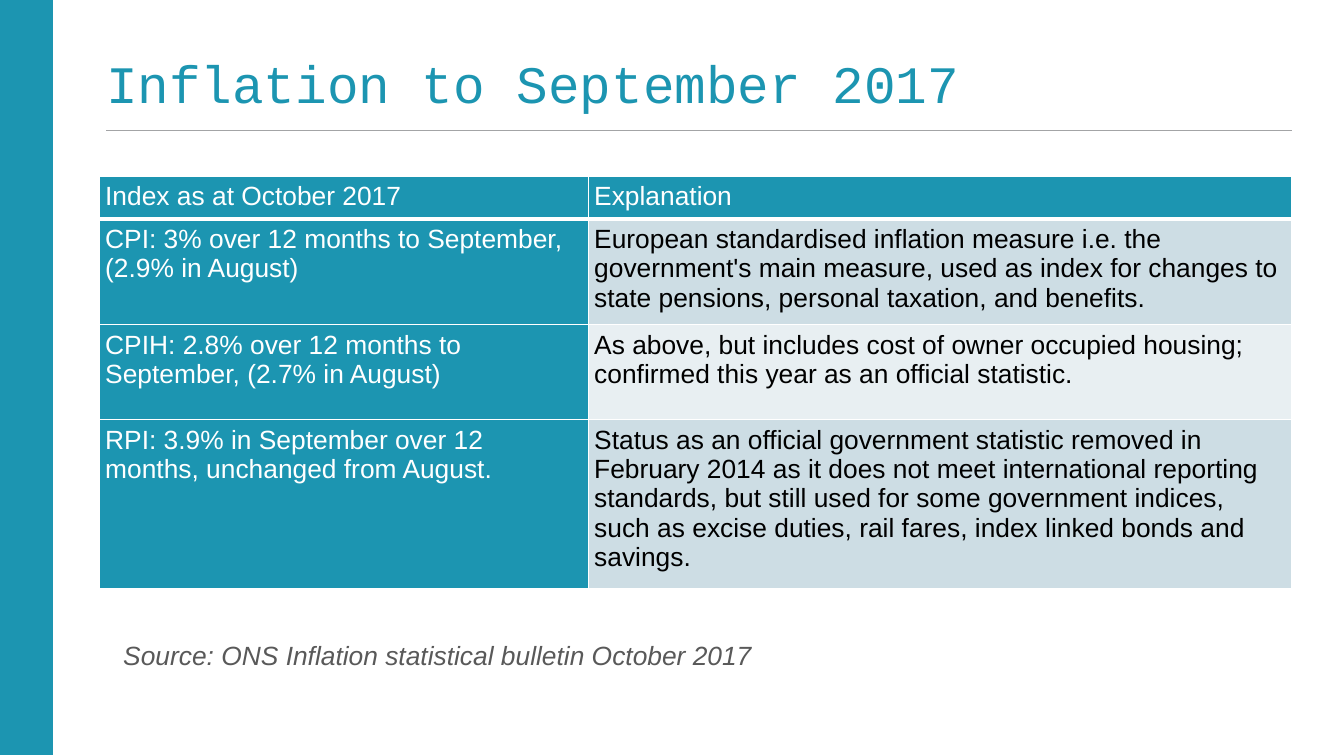
from dataclasses import dataclass

from lxml.etree import SubElement
from pptx import Presentation
from pptx.dml.color import RGBColor
from pptx.enum.shapes import MSO_CONNECTOR, MSO_SHAPE
from pptx.enum.text import MSO_ANCHOR
from pptx.oxml.ns import qn
from pptx.slide import Slide
from pptx.table import _Cell
from pptx.text.text import TextFrame
from pptx.util import Pt

TEAL = "1C95B1"
WHITE = "FFFFFF"
BLACK = "000000"
PALE_BLUE = "CDDDE4"
PALER_BLUE = "E8EFF2"
RULE_GREY = "A3A4A6"
SOURCE_GREY = "595959"

SLIDE_WIDTH, SLIDE_HEIGHT = 1020.96, 573.84
CONTENT_LEFT, CONTENT_RIGHT = 80.6, 981.4
RULE_TOP = 99.4
COLUMN_WIDTHS = (371.5, 534.2)
CELL_MARGIN = 4.2


@dataclass(frozen=True)
class IndexRow:
    index: str
    explanation: str
    height: float
    explanation_fill: str
    explanation_color: str = BLACK
    bottom_border: float = 1


INDEX_ROWS = (
    IndexRow("Index as at October 2017", "Explanation", 32, TEAL, WHITE, 3),
    IndexRow(
        "CPI: 3% over 12 months to September, (2.9% in August)",
        "European standardised inflation measure i.e. the government's main measure, "
        "used as index for changes to state pensions, personal taxation, and benefits.",
        80.2,
        PALE_BLUE,
    ),
    IndexRow(
        "CPIH: 2.8% over 12 months to September, (2.7% in August)",
        "As above, but includes cost of owner occupied housing; "
        "confirmed this year as an official statistic.",
        72.3,
        PALER_BLUE,
    ),
    IndexRow(
        "RPI: 3.9% in September over 12 months, unchanged from August.",
        "Status as an official government statistic removed in February 2014 as it does "
        "not meet international reporting standards, but still used for some government "
        "indices, such as excise duties, rail fares, index linked bonds and savings.",
        128,
        PALE_BLUE,
    ),
)


def rgb(color: str) -> RGBColor:
    return RGBColor.from_string(color)


def write_text(
    frame: TextFrame,
    text: str,
    *,
    color: str,
    size: float = 20,
    font_name: str = "Arial",
    italic: bool = False,
    line_spacing: float = 1.0,
) -> None:
    paragraph = frame.paragraphs[0]
    paragraph.line_spacing = line_spacing
    run = paragraph.add_run()
    run.text = text
    run.font.name = font_name
    run.font.size = Pt(size)
    run.font.bold = False
    run.font.italic = italic
    run.font.color.rgb = rgb(color)


def add_text_frame(
    slide: Slide, left: float, top: float, width: float, height: float
) -> TextFrame:
    frame = slide.shapes.add_textbox(Pt(left), Pt(top), Pt(width), Pt(height)).text_frame
    frame.word_wrap = True
    frame.vertical_anchor = MSO_ANCHOR.MIDDLE
    frame.margin_left = frame.margin_right = 0
    frame.margin_top = frame.margin_bottom = 0
    return frame


def add_side_band(slide: Slide) -> None:
    band = slide.shapes.add_shape(MSO_SHAPE.RECTANGLE, 0, 0, Pt(40.3), Pt(SLIDE_HEIGHT))
    band.shadow.inherit = False
    band.fill.solid()
    band.fill.fore_color.rgb = rgb(TEAL)
    band.line.fill.background()


def add_title_rule(slide: Slide) -> None:
    rule = slide.shapes.add_connector(
        MSO_CONNECTOR.STRAIGHT,
        Pt(CONTENT_LEFT),
        Pt(RULE_TOP),
        Pt(CONTENT_RIGHT),
        Pt(RULE_TOP),
    )
    rule.line.width = Pt(1)
    rule.line.color.rgb = rgb(RULE_GREY)
    SubElement(rule._element.spPr, qn("a:effectLst"))


def add_borders(cell: _Cell, top: float, bottom: float) -> None:
    properties = cell._tc.get_or_add_tcPr()
    for side, width in (("L", 1), ("R", 1), ("T", top), ("B", bottom)):
        border = SubElement(properties, qn(f"a:ln{side}"), w=str(Pt(width)))
        fill = SubElement(border, qn("a:solidFill"))
        SubElement(fill, qn("a:srgbClr"), val=WHITE)


def fill_cell(
    cell: _Cell, text: str, fill: str, color: str, top: float, bottom: float
) -> None:
    add_borders(cell, top, bottom)
    cell.fill.solid()
    cell.fill.fore_color.rgb = rgb(fill)
    cell.margin_left = cell.margin_right = Pt(CELL_MARGIN)
    cell.margin_top = cell.margin_bottom = Pt(CELL_MARGIN)
    cell.vertical_anchor = MSO_ANCHOR.TOP
    write_text(cell.text_frame, text, color=color)


def add_index_table(slide: Slide) -> None:
    width = sum(COLUMN_WIDTHS)
    height = sum(row.height for row in INDEX_ROWS)
    table = slide.shapes.add_table(
        len(INDEX_ROWS),
        len(COLUMN_WIDTHS),
        Pt(CONTENT_RIGHT - width),
        Pt(134),
        Pt(width),
        Pt(height),
    ).table
    for column, column_width in zip(table.columns, COLUMN_WIDTHS):
        column.width = Pt(column_width)
    top = 1
    for position, row in enumerate(INDEX_ROWS):
        table.rows[position].height = Pt(row.height)
        cells = (
            (row.index, TEAL, WHITE),
            (row.explanation, row.explanation_fill, row.explanation_color),
        )
        for column_position, (text, fill, color) in enumerate(cells):
            cell = table.cell(position, column_position)
            fill_cell(cell, text, fill, color, top, row.bottom_border)
        top = row.bottom_border


def main() -> None:
    presentation = Presentation()
    presentation.slide_width = Pt(SLIDE_WIDTH)
    presentation.slide_height = Pt(SLIDE_HEIGHT)
    slide = presentation.slides.add_slide(presentation.slide_layouts[6])

    add_side_band(slide)
    add_title_rule(slide)
    write_text(
        add_text_frame(slide, CONTENT_LEFT, 45.6, CONTENT_RIGHT - CONTENT_LEFT, 42.5),
        "Inflation to September 2017",
        color=TEAL,
        size=40,
        font_name="Courier New",
        line_spacing=0.8,
    )
    write_text(
        add_text_frame(slide, 93.6, 485.6, 481, 24.5),
        "Source: ONS Inflation statistical bulletin October 2017",
        color=SOURCE_GREY,
        italic=True,
    )
    add_index_table(slide)
    presentation.save("out.pptx")


if __name__ == "__main__":
    main()
